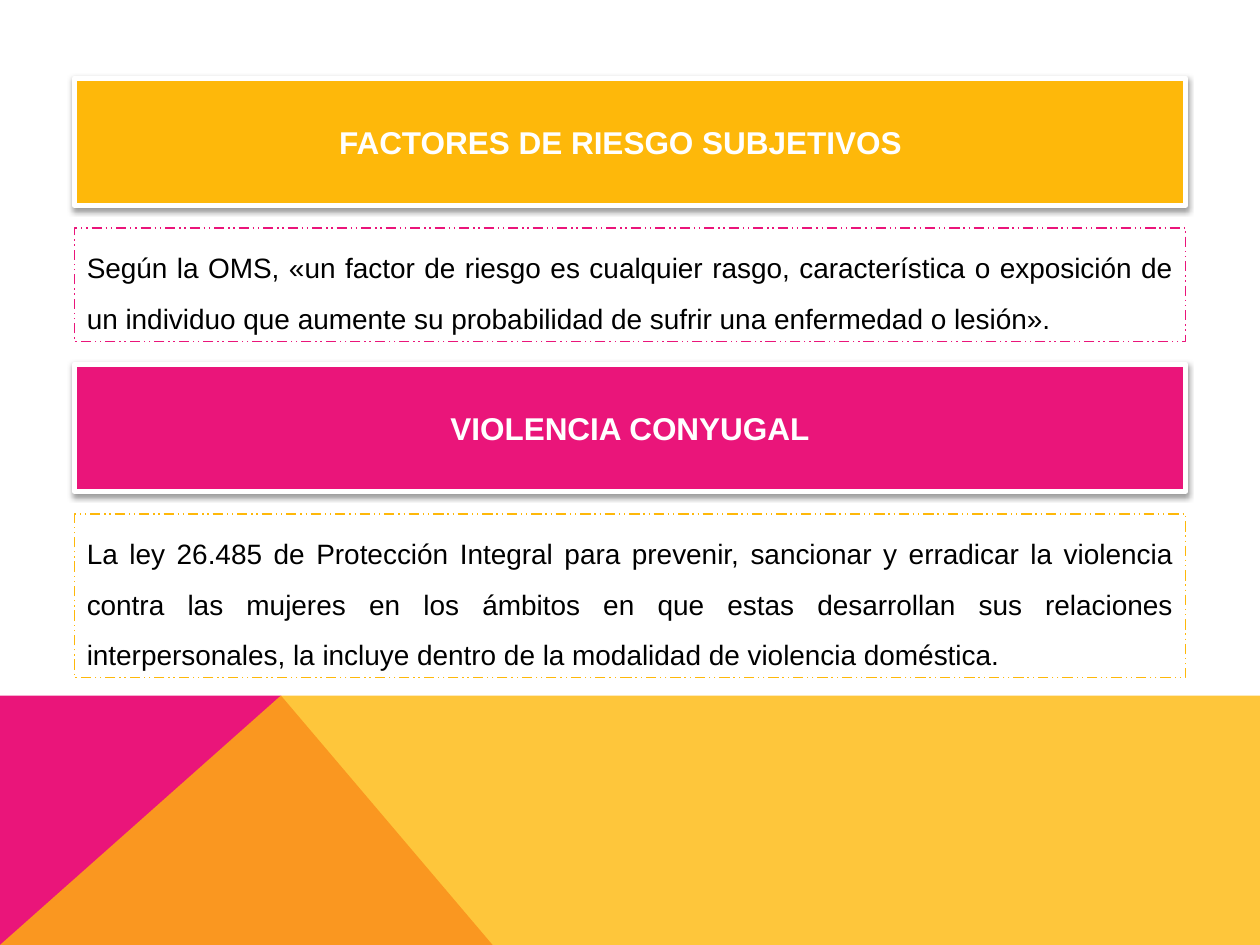
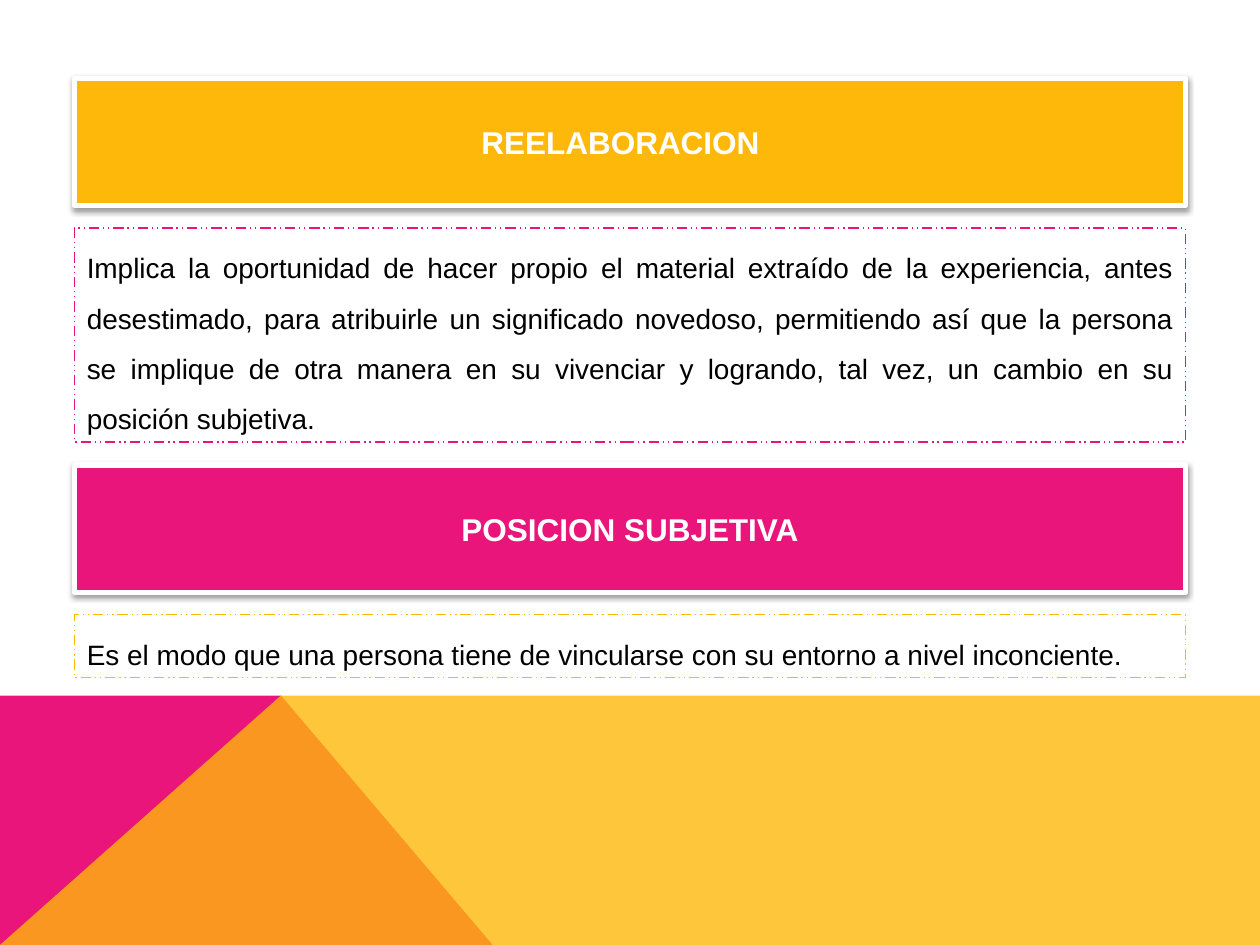
from lxml import etree
from pptx import Presentation
from pptx.dml.color import RGBColor
from pptx.enum.dml import MSO_LINE
from pptx.enum.shapes import MSO_SHAPE
from pptx.enum.text import MSO_ANCHOR, MSO_AUTO_SIZE, PP_ALIGN
from pptx.oxml.ns import qn
from pptx.util import Inches, Pt

WHITE = RGBColor(0xFF, 0xFF, 0xFF)
BLACK = RGBColor(0x00, 0x00, 0x00)
AMBER = RGBColor(0xFE, 0xB8, 0x0A)
PINK = RGBColor(0xEA, 0x15, 0x7A)
FONT = "Arial"

# Vertical rhythm of the single column, in inches
WIDTH, HEIGHT = 10, 7.5
MARGIN, TOP = 0.59, 0.62
COLUMN = WIDTH - 2 * MARGIN
BANNER_HEIGHT, GAP = 1.01, 0.18
LINE_HEIGHT, PADDING = 0.4, 0.1

# Decoration at the foot: left edge, peak and right foot of the triangle
BAND_TOP, PEAK, FOOT = 5.52, 2.23, 3.91
BAND_SHAPES = [
    (PINK, 100, [(0, HEIGHT), (0, BAND_TOP), (PEAK, BAND_TOP), (FOOT, HEIGHT)]),
    (AMBER, 80, [(0, HEIGHT), (PEAK, BAND_TOP), (WIDTH, BAND_TOP), (WIDTH, HEIGHT)]),
]

# Each slide: (heading, definition, lines of the definition)
SLIDES = [
    [("FACTORES DE RIESGO SUBJETIVOS",
      "Según la OMS, «un factor de riesgo es cualquier rasgo, característica o exposición de "
      "un individuo que aumente su probabilidad de sufrir una enfermedad o lesión».", 2),
     ("VIOLENCIA CONYUGAL",
      "La ley 26.485 de Protección Integral para prevenir, sancionar y erradicar la violencia "
      "contra las mujeres en los ámbitos en que estas desarrollan sus relaciones "
      "interpersonales, la incluye dentro de la modalidad de violencia doméstica.", 3)],
    [("REELABORACION",
      "Implica la oportunidad de hacer propio el material extraído de la experiencia, antes "
      "desestimado, para atribuirle un significado novedoso, permitiendo así que la persona "
      "se implique de otra manera en su vivenciar y logrando, tal vez, un cambio en su "
      "posición subjetiva.", 4),
     ("POSICION SUBJETIVA",
      "Es el modo que una persona tiene de vincularse con su entorno a nivel inconciente.", 1)],
]


def write(shape, text, size, color, bold, alignment, anchor):
    """Fill a box with one formatted paragraph."""
    frame = shape.text_frame
    frame.text = text
    frame.word_wrap = True
    frame.auto_size = MSO_AUTO_SIZE.NONE
    frame.vertical_anchor = anchor
    paragraph = frame.paragraphs[0]
    paragraph.alignment = alignment
    font = paragraph.runs[0].font
    font.name, font.size, font.bold = FONT, Pt(size), bold
    font.color.rgb = color
    return paragraph


def add_shadow(shape):
    """Cast a soft shadow straight down."""
    shape.shadow.inherit = False
    effects = shape.element.spPr.find(qn("a:effectLst"))
    shadow = etree.SubElement(effects, qn("a:outerShdw"), blurRad=str(Pt(3.1)),
                              dist=str(Pt(1.6)), dir="5400000", rotWithShape="0")
    color = etree.SubElement(shadow, qn("a:srgbClr"), val=str(BLACK))
    etree.SubElement(color, qn("a:alpha"), val="38000")


presentation = Presentation()
presentation.slide_width, presentation.slide_height = Inches(WIDTH), Inches(HEIGHT)
layout = presentation.slide_layouts.get_by_name("Title Only")

for slide_number, sections in enumerate(SLIDES):
    slide = presentation.slides.add_slide(layout)

    # Shared band: built once, then kept on the layout
    if slide_number == 0:
        for index, (color, opacity, points) in enumerate(BAND_SHAPES):
            corners = [(Inches(x), Inches(y)) for x, y in points]
            builder = slide.shapes.build_freeform(*corners[0])
            builder.add_line_segments(corners[1:], close=True)
            shape = builder.convert_to_shape()
            shape.shadow.inherit = False
            shape.fill.solid()
            shape.fill.fore_color.rgb = color
            shape.line.fill.background()
            fill_color = shape.element.spPr.find(qn("a:solidFill"))[0]
            etree.SubElement(fill_color, qn("a:alpha"), val=str(opacity * 1000))
            shape.element.nvSpPr.cNvPr.set("id", str(100 + index))
            layout.shapes.element.insert(2 + index, shape.element)

    # Banner and definition, stacked down the column
    top = TOP
    for index, (heading, definition, lines) in enumerate(sections):
        banner_color, border_color = [(AMBER, PINK), (PINK, AMBER)][index]
        if index == 0:
            banner = slide.shapes.title
        else:
            banner = slide.shapes.add_shape(MSO_SHAPE.RECTANGLE, 0, 0, 0, 0)
        banner.left, banner.top = Inches(MARGIN), Inches(top)
        banner.width, banner.height = Inches(COLUMN), Inches(BANNER_HEIGHT)
        banner.fill.solid()
        banner.fill.fore_color.rgb = banner_color
        banner.line.color.rgb = WHITE
        banner.line.width = Pt(3)
        add_shadow(banner)
        write(banner, heading, 18, WHITE, True, PP_ALIGN.CENTER, MSO_ANCHOR.MIDDLE)
        if index == 0:
            banner.text_frame.margin_right = Inches(0.25)
        top += BANNER_HEIGHT + GAP

        height = PADDING + lines * LINE_HEIGHT
        box = slide.shapes.add_shape(MSO_SHAPE.RECTANGLE, Inches(MARGIN), Inches(top),
                                     Inches(COLUMN), Inches(height))
        box.shadow.inherit = False
        box.fill.background()
        box.line.color.rgb = border_color
        box.line.width = Pt(0.75)
        box.line.dash_style = MSO_LINE.DASH_DOT_DOT
        paragraph = write(box, definition, 16, BLACK, False, PP_ALIGN.JUSTIFY, MSO_ANCHOR.TOP)
        paragraph.line_spacing = 1.5
        top += height + GAP

presentation.save("out.pptx")
